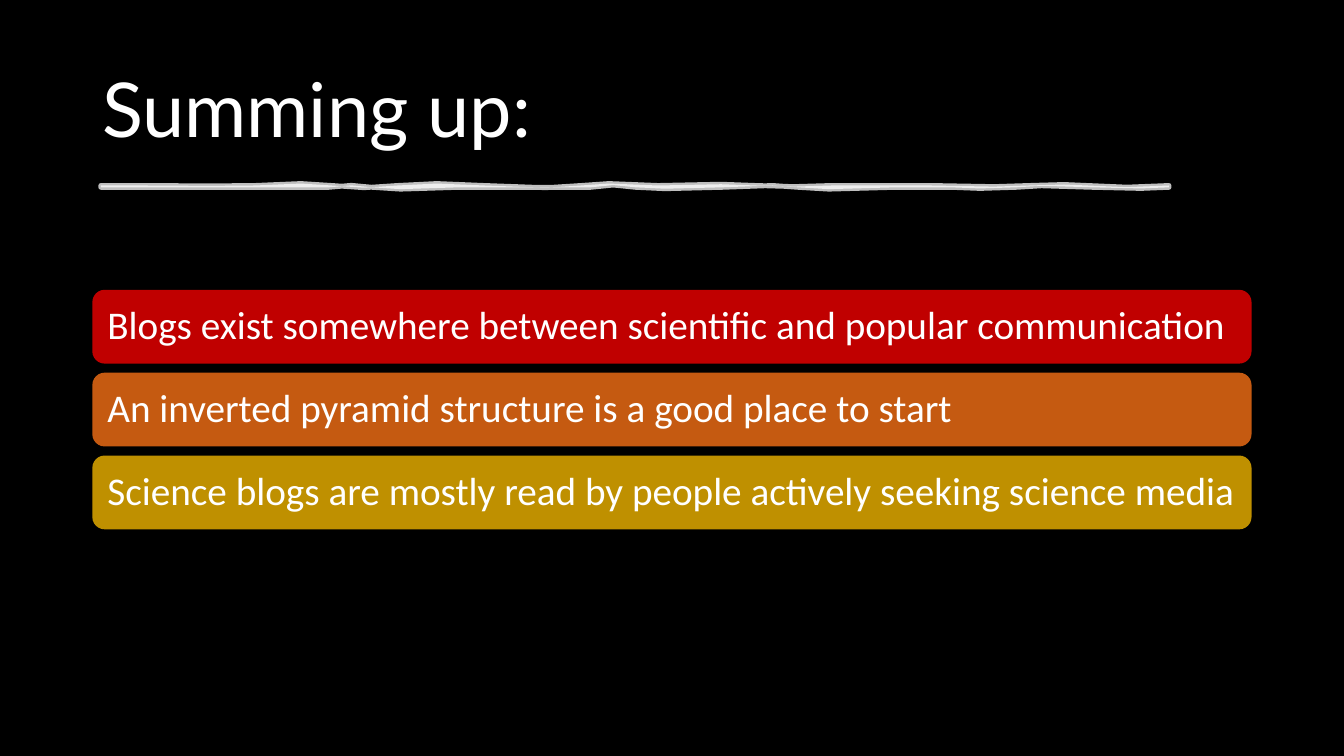
from lxml import etree
from pptx import Presentation
from pptx.dml.color import RGBColor
from pptx.enum.shapes import MSO_SHAPE
from pptx.enum.text import MSO_ANCHOR, PP_ALIGN
from pptx.oxml.ns import qn
from pptx.util import Pt

ROUNDED = MSO_SHAPE.ROUNDED_RECTANGLE
MIDDLE = MSO_ANCHOR.MIDDLE
LEFT = PP_ALIGN.LEFT

# Content
COLORS = {"black": "000000", "white": "FFFFFF", "red": "C00000",
          "orange": "C55A11", "gold": "BF9000"}
TITLE = "Summing up:"
POINTS = [
    ("Blogs exist somewhere between scientific and popular communication", "red"),
    ("An inverted pyramid structure is a good place to start", "orange"),
    ("Science blogs are mostly read by people actively seeking science media", "gold"),
]
TITLE_FONT = {"name": "Lato", "size": Pt(54)}
POINT_FONT = {"name": "Calibri", "size": Pt(28)}

# Hand-drawn rule: (x, offset from the edge's base line) in points
RULE_TOP, RULE_BOTTOM = 132.5, 133.8
TOP_EDGE = [
    (72, 0), (104, 0), (150, .3), (182, 0), (215, -1.4), (237, 0), (260, 1.6),
    (284, 0), (312, -1.4), (346, 0), (390, 1.6), (415, 0), (435, -1.4), (470, 0),
    (515, -.9), (540, 0), (567, .8), (594, 0), (665, 0), (710, .8), (735, 0),
    (760, -.7), (805, 1.2), (835, 0),
]
BOTTOM_EDGE = [
    (835, 0), (815, .8), (780, 0), (744, -1.1), (726, 0), (700, .8), (679, 0),
    (640, 0), (592, 1.3), (570, 0), (552, -1.3), (516, 0), (475, 1), (454, 0),
    (438, -1.6), (422, 0), (383, 0), (328, 0), (286, 1.3), (266, 0), (251, -1.4),
    (235, 0), (203, 0), (148, 0), (72, 0),
]
UNITS = 100  # freeform units per point


def color(name):
    return RGBColor.from_string(COLORS[name])


def paint(fill, name):
    fill.solid()
    fill.fore_color.rgb = color(name)


def write(shape, text, font_format, inset_x, inset_y):
    frame = shape.text_frame
    frame_format = {"word_wrap": True, "vertical_anchor": MIDDLE,
                    "margin_left": Pt(inset_x), "margin_right": Pt(inset_x),
                    "margin_top": Pt(inset_y), "margin_bottom": Pt(inset_y)}
    for key, value in frame_format.items():
        setattr(frame, key, value)
    paragraph = frame.paragraphs[0]
    paragraph.alignment = LEFT
    paragraph.line_spacing = 0.9
    run = paragraph.add_run()
    run.text = text
    for key, value in font_format.items():
        setattr(run.font, key, value)
    run.font.color.rgb = color("white")


presentation = Presentation()
presentation.slide_width, presentation.slide_height = Pt(960), Pt(540)
slide = presentation.slides.add_slide(presentation.slide_layouts[6])
paint(slide.background.fill, "black")

# Title
title = slide.shapes.add_textbox(Pt(66), Pt(28.75), Pt(828), Pt(104.4))
write(title, TITLE, TITLE_FONT, 7.2, 3.6)

# Rule, translucent in fill and stroke
start, *others = [(x * UNITS, (base + offset) * UNITS)
                  for base, edge in ((RULE_TOP, TOP_EDGE), (RULE_BOTTOM, BOTTOM_EDGE))
                  for x, offset in edge]
builder = slide.shapes.build_freeform(*start, scale=Pt(1) / UNITS)
builder.add_line_segments(others, close=True)
rule = builder.convert_to_shape()
rule.shadow.inherit = False
paint(rule.fill, "white")
paint(rule.line.fill, "white")
rule.line.width = Pt(3.5)
for srgb in rule.element.spPr.iter(qn("a:srgbClr")):
    etree.SubElement(srgb, qn("a:alpha")).set("val", "75000")

# Bars
BAR_LEFT, BAR_TOP, BAR_WIDTH, BAR_HEIGHT, BAR_GAP = 66, 207, 828, 52.7, 6.5
for index, (text, fill_name) in enumerate(POINTS):
    top = BAR_TOP + index * (BAR_HEIGHT + BAR_GAP)
    bar = slide.shapes.add_shape(ROUNDED, Pt(BAR_LEFT), Pt(top),
                                 Pt(BAR_WIDTH), Pt(BAR_HEIGHT))
    bar.shadow.inherit = False
    paint(bar.fill, fill_name)
    bar.line.fill.background()
    write(bar, text, POINT_FONT, 8.2, 8.2)

presentation.save("out.pptx")
